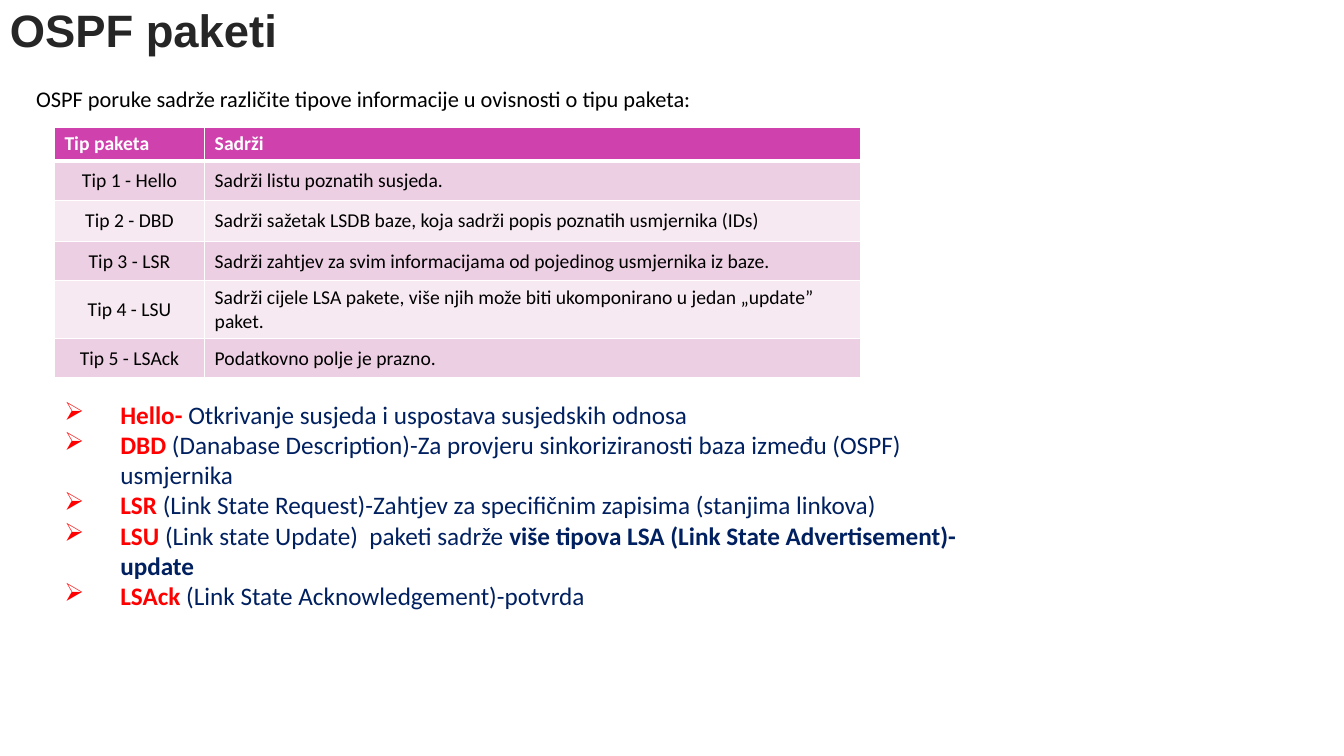
from lxml.etree import SubElement
from pptx import Presentation
from pptx.dml.color import RGBColor
from pptx.enum.text import MSO_ANCHOR as Anchor, PP_ALIGN as Align
from pptx.oxml.ns import qn
from pptx.util import Pt

INK, WHITE, RED, NAVY = "000000", "FFFFFF", "FF0000", "002060"
HEADER, BANDS = "CF41AD", ("F6E9F1", "EDCFE3")

PACKETS = [
    ("Tip paketa", "Sadrži"),
    ("Tip 1 - Hello", "Sadrži listu poznatih susjeda."),
    ("Tip 2 - DBD", "Sadrži sažetak LSDB baze, koja sadrži popis poznatih usmjernika (IDs)"),
    ("Tip 3 - LSR", "Sadrži zahtjev za svim informacijama od pojedinog usmjernika iz baze."),
    ("Tip 4 - LSU", "Sadrži cijele LSA pakete, više njih može biti ukomponirano u jedan „update” paket."),
    ("Tip 5 - LSAck", "Podatkovno polje je prazno."),
]
PURPOSES = [
    ("Hello- ", "Otkrivanje susjeda i uspostava susjedskih odnosa", ""),
    ("DBD ", "(Danabase Description)-Za provjeru sinkoriziranosti baza između (OSPF) usmjernika", ""),
    ("LSR ", "(Link State Request)-Zahtjev za specifičnim zapisima (stanjima linkova)", ""),
    ("LSU ", "(Link state Update)  paketi sadrže ", "više tipova LSA (Link State Advertisement)-update"),
    ("LSAck ", "(Link State Acknowledgement)-potvrda", ""),
]


def color(value):
    return RGBColor.from_string(value)


def write(para, text, size=14, ink=INK, bold=False, name="Calibri"):
    span = para.add_run()
    span.text = text
    font = span.font
    font.size, font.bold, font.name = Pt(size), bold, name
    font.color.rgb = color(ink)


class Slide:
    def __init__(self, deck):
        self.page = deck.slides.add_slide(deck.slide_layouts[6])

    def textbox(self, left, top, width, height, anchor=Anchor.TOP):
        box = self.page.shapes.add_textbox(Pt(left), Pt(top), Pt(width), Pt(height))
        frame = box.text_frame
        frame.word_wrap = True
        frame.vertical_anchor = anchor
        return frame

    def bullets(self, frame, items):
        for index, (term, meaning, emphasis) in enumerate(items):
            para = frame.add_paragraph() if index else frame.paragraphs[0]
            props = para._p.get_or_add_pPr()
            props.set("marL", str(Pt(40)))
            props.set("indent", str(-Pt(40)))
            tint = SubElement(props, qn("a:buClr"))
            SubElement(tint, qn("a:srgbClr"), val=RED)
            SubElement(props, qn("a:buChar"), char="➢")
            write(para, term, 18, RED, True)
            write(para, meaning, 18, NAVY)
            if emphasis:
                write(para, emphasis, 18, NAVY, True)

    def border(self, cell, side, width):
        line = SubElement(cell._tc.get_or_add_tcPr(), qn(f"a:ln{side}"), w=str(Pt(width)))
        fill = SubElement(line, qn("a:solidFill"))
        SubElement(fill, qn("a:srgbClr"), val=WHITE)

    def table(self, left, top, widths, heights, rows):
        table = self.page.shapes.add_table(
            len(rows), len(widths), Pt(left), Pt(top), Pt(sum(widths)), Pt(sum(heights))
        ).table
        for column, width in zip(table.columns, widths):
            column.width = Pt(width)
        for index, (texts, height) in enumerate(zip(rows, heights)):
            table.rows[index].height = Pt(height)
            for place, text in enumerate(texts):
                cell = table.cell(index, place)
                cell.vertical_anchor = Anchor.MIDDLE
                for side in "LRTB":
                    thick = (index, side) in ((0, "B"), (1, "T"))
                    self.border(cell, side, 3 if thick else 1)
                cell.fill.solid()
                cell.fill.fore_color.rgb = color(BANDS[index % 2] if index else HEADER)
                para = cell.text_frame.paragraphs[0]
                para.alignment = Align.CENTER if index and not place else Align.LEFT
                write(para, text, ink=INK if index else WHITE, bold=not index)


def main():
    deck = Presentation()
    deck.slide_width, deck.slide_height = Pt(960), Pt(540)
    slide = Slide(deck)

    title = slide.textbox(0, 1.5, 834.5, 44.5, Anchor.MIDDLE).paragraphs[0]
    title.line_spacing = 0.9
    write(title, "OSPF paketi", 32.4, "262626", True, "Arial")

    intro = slide.textbox(18.7, 57.6, 616.3, 28).paragraphs[0]
    intro.space_after = Pt(3)
    write(intro, "OSPF poruke sadrže različite tipove informacije u ovisnosti o tipu paketa:", 16)

    slide.table(38.9, 90.7, (107.3, 468.7), (24.5, 28, 29.5, 28, 41.4, 28), PACKETS)
    slide.bullets(slide.textbox(38.9, 281.5, 669.6, 159.8), PURPOSES)
    deck.save("out.pptx")


if __name__ == "__main__":
    main()
